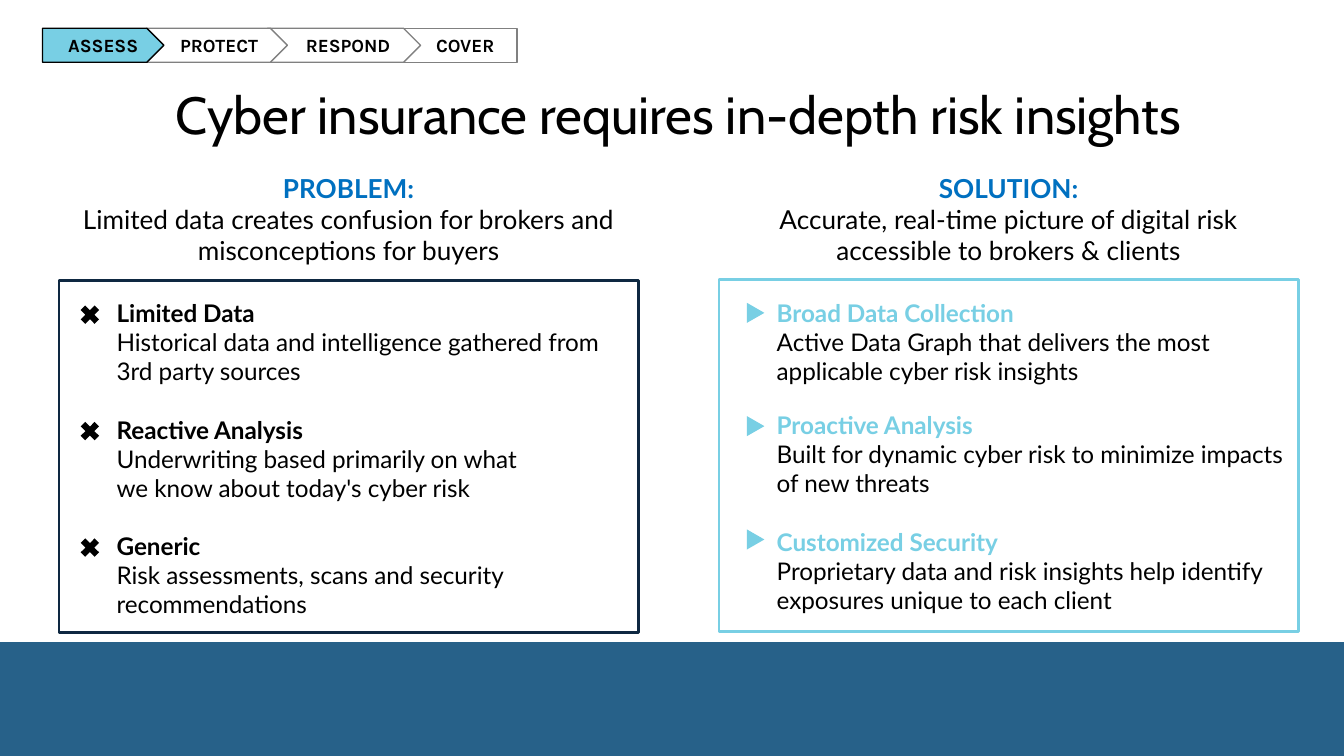
"""Build the cyber insurance problem and solution slide."""
import dataclasses

import pptx
import pptx.dml.color
import pptx.enum.shapes
import pptx.enum.text
import pptx.util

Pt = pptx.util.Pt
Shape = pptx.enum.shapes.MSO_SHAPE
Align = pptx.enum.text.PP_ALIGN
Anchor = pptx.enum.text.MSO_ANCHOR


@dataclasses.dataclass(frozen=True)
class Theme:
    """Colours, fonts and type sizes of the slide."""
    black: str = "000000"
    white: str = "FFFFFF"
    grey: str = "808080"
    navy: str = "0E2841"
    sky: str = "78CFE4"
    blue: str = "0070C0"
    band: str = "276189"
    title_font: str = "Cabin"
    body_font: str = "Lato"
    step_font: str = "Karla"
    title_size: float = 28
    lead_size: float = 14
    body_size: float = 13
    step_size: float = 10


class SlideBuilder:
    """Holds the theme and the current slide, and draws each kind of element."""

    def __init__(self, slide, theme):
        """Keep the slide and its theme."""
        self.slide = slide
        self.theme = theme

    def shape(self, kind, bounds, fill=None, line=None, width=0.75):
        """Draw a preset shape without a shadow."""
        shape = self.slide.shapes.add_shape(kind, *map(Pt, bounds))
        shape.shadow.inherit = False
        if fill:
            shape.fill.solid()
            shape.fill.fore_color.rgb = pptx.dml.color.RGBColor.from_string(fill)
        else:
            shape.fill.background()
        if line:
            shape.line.color.rgb = pptx.dml.color.RGBColor.from_string(line)
            shape.line.width = Pt(width)
        else:
            shape.line.fill.background()
        return shape

    def frame(self, box, inset=7.2):
        """Set wrapping and equal insets, and return the text frame."""
        frame = box.text_frame
        frame.word_wrap = True
        frame.margin_left = frame.margin_right = Pt(inset)
        frame.margin_top = frame.margin_bottom = Pt(inset)
        return frame

    def text_box(self, bounds, inset=7.2):
        """Add a wrapping text box and return its text frame."""
        box = self.slide.shapes.add_textbox(*map(Pt, bounds))
        return self.frame(box, inset)

    def paragraph(self, frame, text, font, size, color, bold=False,
                  align=Align.LEFT, before=0):
        """Add one paragraph, using the empty first one if there is one."""
        first = frame.paragraphs[0]
        para = frame.add_paragraph() if first.text else first
        para.text = text
        para.alignment = align
        if before:
            para.space_before = Pt(before)
        para.font.name = font
        para.font.size = Pt(size)
        para.font.bold = bold
        para.font.color.rgb = pptx.dml.color.RGBColor.from_string(color)

    def title(self, text):
        """Add the slide title."""
        theme = self.theme
        frame = self.text_box((42.5, 44, 641.5, 44.6), 0)
        self.paragraph(frame, text, theme.title_font, theme.title_size,
                       theme.black, align=Align.CENTER)

    def step(self, text, left, width, kind, indent, active):
        """Draw one step of the progress trail."""
        theme = self.theme
        shape = self.shape(kind, (left, 15.2, width, 18.2),
                           theme.sky if active else theme.white,
                           theme.black if active else theme.grey)
        frame = self.frame(shape)
        frame.margin_left = Pt(7.2 + indent)
        frame.vertical_anchor = Anchor.MIDDLE
        self.paragraph(frame, text, theme.step_font, theme.step_size,
                       theme.black, True, Align.CENTER)

    def lead(self, left, heading, text):
        """Add the centred heading and summary above a card."""
        theme = self.theme
        frame = self.text_box((left, 85, 310.3, 69))
        for line, color, bold in ((heading, theme.blue, True),
                                  (text, theme.black, False)):
            self.paragraph(frame, line, theme.body_font, theme.lead_size,
                           color, bold, Align.CENTER)

    def card(self, left, top, border, color, items):
        """Draw a bordered card with headed items, each with a gap before it."""
        theme = self.theme
        self.shape(Shape.RECTANGLE, (left, top, 310.3, 188.6),
                   line=border, width=1.5)
        frame = self.text_box((left + 23.8, 152.6, 286.5, 183))
        for heading, text, gap in items:
            self.paragraph(frame, heading, theme.body_font, theme.body_size,
                           color, True, before=gap)
            self.paragraph(frame, text, theme.body_font, theme.body_size,
                           theme.black)

    def crosses(self, left, top, pitch, count):
        """Draw a column of cross markers."""
        for row in range(count):
            cross = self.shape(Shape.MATH_MULTIPLY,
                               (left, top + row * pitch, 14.4, 14.4),
                               self.theme.black)
            cross.adjustments[0] = 0.235

    def triangles(self, left, top, pitch, count):
        """Draw a column of triangle markers pointing right."""
        for row in range(count):
            triangle = self.shape(Shape.FLOWCHART_MERGE,
                                  (left, top + row * pitch, 10.8, 9.4),
                                  self.theme.sky)
            triangle.rotation = 270


def main():
    """Build the slide and save it."""
    deck = pptx.Presentation()
    deck.slide_width, deck.slide_height = Pt(720), Pt(405)
    theme = Theme()
    page = SlideBuilder(deck.slides.add_slide(deck.slide_layouts[6]), theme)

    page.shape(Shape.RECTANGLE, (0, 344, 720, 61), theme.band)
    page.title("Cyber insurance requires in-depth risk insights")

    problem_left, solution_left = 31.6, 385.2
    page.card(problem_left, 150.4, theme.navy, theme.black, (
        ("Limited Data",
         "Historical data and intelligence gathered from 3rd party sources", 0),
        ("Reactive Analysis",
         "Underwriting based primarily on what\vwe know about today's cyber risk",
         15.6),
        ("Generic",
         "Risk assessments, scans and security recommendations", 15.6)))
    page.lead(problem_left, "PROBLEM:",
              "Limited data creates confusion for brokers and "
              "misconceptions for buyers")
    page.crosses(41, 161.4, 62.4, 3)

    page.card(solution_left, 149.8, theme.sky, theme.sky, (
        ("Broad Data Collection",
         "Active Data Graph that delivers the most applicable cyber risk insights",
         0),
        ("Proactive Analysis",
         "Built for dynamic cyber risk to minimize impacts of new threats", 13.2),
        ("Customized Security",
         "Proprietary data and risk insights help identify exposures unique "
         "to each client", 15.6)))
    page.lead(solution_left, "SOLUTION:",
              "Accurate, real-time picture of digital risk accessible to "
              "brokers & clients")
    page.triangles(399.4, 162.9, 60.7, 3)

    steps = (("COVER", 214.6, 62.4, Shape.RECTANGLE, 6.6),
             ("RESPOND", 143.3, 82, Shape.PENTAGON, 8.8),
             ("PROTECT", 78.5, 75.5, Shape.PENTAGON, 6.6),
             ("ASSESS", 22.8, 65, Shape.PENTAGON, 4.4))
    for text, left, width, kind, indent in steps:
        page.step(text, left, width, kind, indent, text == "ASSESS")

    deck.save("out.pptx")


if __name__ == "__main__":
    main()
